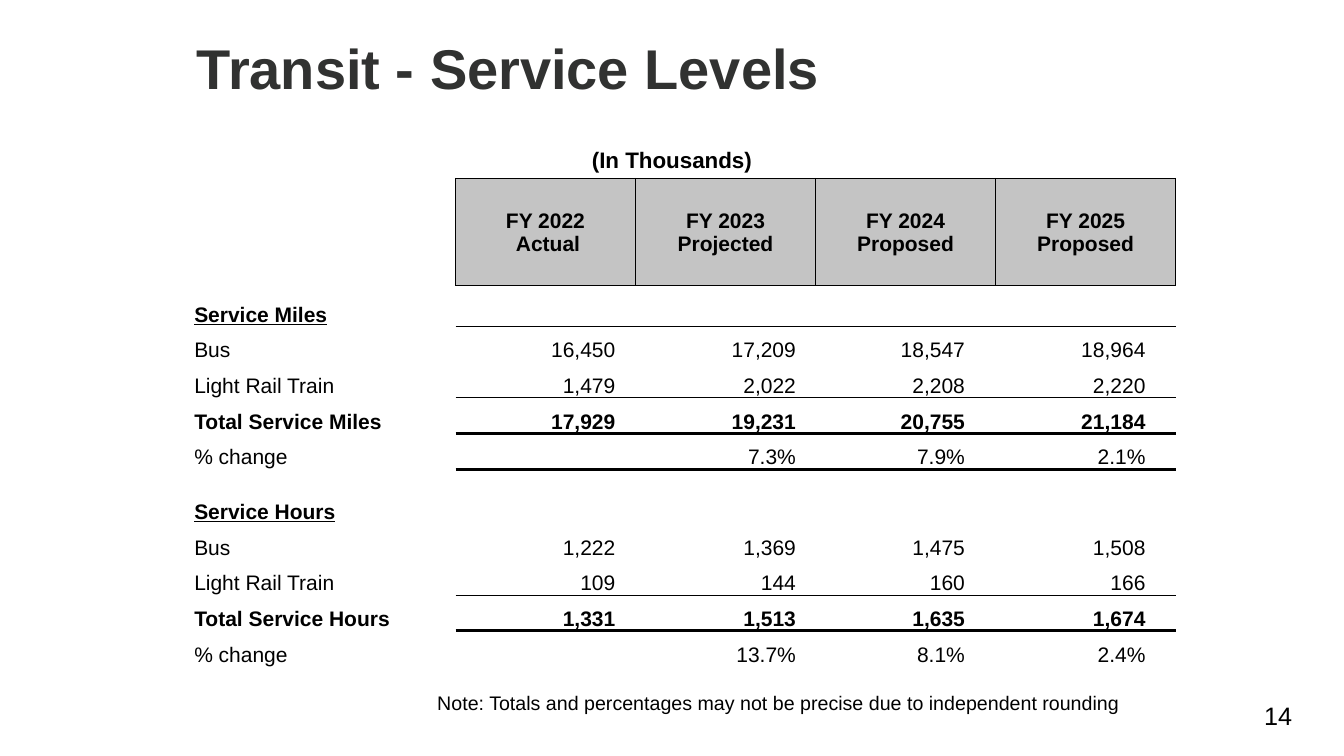
import dataclasses

import lxml.etree
import pptx
import pptx.dml.color
import pptx.enum.text
import pptx.oxml.ns
import pptx.util

ALIGN = pptx.enum.text.PP_ALIGN
ANCHOR = pptx.enum.text.MSO_ANCHOR
PLAIN_TABLE_STYLE = "{2D5ABB26-0587-4C30-8999-92F81FD0307C}"


@dataclasses.dataclass(frozen=True)
class Theme:
    font: str = "Arial"
    title_color: str = "313231"
    ink: str = "000000"
    header_fill: str = "C4C4C4"
    title_size: int = 40
    number_size: int = 18
    unit_size: int = 16
    table_size: int = 15
    note_size: int = 14
    thin_line: float = 1
    thick_line: float = 2.25


THEME = Theme()

HEADERS = ["FY 2022\n Actual", "FY 2023 Projected", "FY 2024 Proposed", "FY 2025\nProposed"]
SECTIONS = [
    ("Service Miles", [
        ("Bus", ["16,450", "17,209", "18,547", "18,964"]),
        ("Light Rail Train", ["1,479", "2,022", "2,208", "2,220"]),
        ("Total Service Miles", ["17,929", "19,231", "20,755", "21,184"]),
        ("% change", ["", "7.3%", "7.9%", "2.1%"]),
    ]),
    ("Service Hours", [
        ("Bus", ["1,222", "1,369", "1,475", "1,508"]),
        ("Light Rail Train", ["109", "144", "160", "166"]),
        ("Total Service Hours", ["1,331", "1,513", "1,635", "1,674"]),
        ("% change", ["", "13.7%", "8.1%", "2.4%"]),
    ]),
]
COLUMN_WIDTHS = [256, 171, 172, 171, 172]
HEADER_HEIGHT = 102
SECTION_HEIGHTS = [39, 52]
ROW_HEIGHT = 34
RIGHT_INSETS = [19, 19, 29, 29]


def px(length):
    return pptx.util.Emu(length * 9525)


def rgb(color):
    return pptx.dml.color.RGBColor.from_string(color)


def format_text(text_frame, size, color=THEME.ink, bold=False, underline=False, align=ALIGN.LEFT):
    for paragraph in text_frame.paragraphs:
        paragraph.alignment = align
        for run in paragraph.runs:
            run.font.name = THEME.font
            run.font.size = pptx.util.Pt(size)
            run.font.color.rgb = rgb(color)
            run.font.bold = bold
            run.font.underline = underline


def add_title(slide, box, text):
    title = slide.shapes.title
    title.left, title.top, title.width, title.height = map(px, box)
    frame = title.text_frame
    frame.text = text
    frame.auto_size = pptx.enum.text.MSO_AUTO_SIZE.NONE
    frame.vertical_anchor = ANCHOR.MIDDLE
    format_text(frame, THEME.title_size, THEME.title_color, bold=True)


def add_label(slide, box, text, size, **style):
    frame = slide.shapes.add_textbox(*map(px, box)).text_frame
    frame.word_wrap = True
    frame.text = text
    format_text(frame, size, **style)
    return frame


def add_page_number(slide, box, text):
    frame = add_label(slide, box, text, THEME.number_size, align=ALIGN.RIGHT)
    frame.margin_top = 0


def add_borders(cell, sides):
    """Draw borders given as {side letter: points}, in the order L, R, T, B."""
    properties = cell._tc.get_or_add_tcPr()
    qn = pptx.oxml.ns.qn
    for side in "LRTB":
        if side in sides:
            line = lxml.etree.SubElement(properties, qn(f"a:ln{side}"), w=str(pptx.util.Pt(sides[side])))
            fill = lxml.etree.SubElement(line, qn("a:solidFill"))
            lxml.etree.SubElement(fill, qn("a:srgbClr"), val=THEME.ink)


def fill_cell(cell, text="", borders=None, fill=None, anchor=ANCHOR.BOTTOM,
              left=7, right=7, **style):
    add_borders(cell, borders or {})
    if fill:
        cell.fill.solid()
        cell.fill.fore_color.rgb = rgb(fill)
    else:
        cell.fill.background()
    cell.margin_left, cell.margin_right = px(left), px(right)
    cell.margin_top, cell.margin_bottom = px(1), 0
    cell.vertical_anchor = anchor
    cell.text_frame.text = text
    format_text(cell.text_frame, THEME.table_size, **style)


def row_borders(label):
    thin, thick = THEME.thin_line, THEME.thick_line
    if label.startswith("Total"):
        return {"T": thin, "B": thick}
    return {"Light Rail Train": {"B": thin}, "% change": {"T": thick}}.get(label, {})


def add_service_table(slide, left, top):
    heights = [HEADER_HEIGHT]
    for section_height, (_, lines) in zip(SECTION_HEIGHTS, SECTIONS):
        heights += [section_height] + [ROW_HEIGHT] * len(lines)
    box = (left, top, sum(COLUMN_WIDTHS), sum(heights))
    table = slide.shapes.add_table(len(heights), len(COLUMN_WIDTHS), *map(px, box)).table
    table.first_row = table.horz_banding = False
    table._tbl.tblPr.find(pptx.oxml.ns.qn("a:tableStyleId")).text = PLAIN_TABLE_STYLE
    for column, width in zip(table.columns, COLUMN_WIDTHS):
        column.width = px(width)
    for row, height in zip(table.rows, heights):
        row.height = px(height)

    rows = iter(table.rows)
    corner, *header_cells = next(rows).cells
    fill_cell(corner, borders={"R": THEME.thin_line})
    for cell, text in zip(header_cells, HEADERS):
        fill_cell(cell, text, dict.fromkeys("LRTB", THEME.thin_line), THEME.header_fill,
                  ANCHOR.MIDDLE, bold=True, align=ALIGN.CENTER)
    for index, (heading, lines) in enumerate(SECTIONS):
        heading_cell, *blank_cells = next(rows).cells
        fill_cell(heading_cell, heading, bold=True, underline=True)
        for cell in blank_cells:
            fill_cell(cell, borders={"T": THEME.thin_line} if index == 0 else {})
        for label, values in lines:
            label_cell, *value_cells = next(rows).cells
            bold = label.startswith("Total")
            fill_cell(label_cell, label, bold=bold)
            for cell, value, inset in zip(value_cells, values, RIGHT_INSETS):
                # The first two percentage columns follow the same insets as their figures.
                fill_cell(cell, value, row_borders(label), left=8, right=inset,
                          bold=bold, align=ALIGN.RIGHT)


def build_service_levels(presentation):
    slide = presentation.slides.add_slide(presentation.slide_layouts[5])
    add_title(slide, (178, 38, 897, 51), "Transit - Service Levels")
    add_page_number(slide, (941, 667, 299, 38), "14")
    add_label(slide, (160, 134, 960, 36), "(In Thousands)", THEME.unit_size,
              bold=True, align=ALIGN.CENTER)
    add_service_table(slide, 178, 170)
    add_label(slide, (407, 653, 698, 33),
              "Note: Totals and percentages may not be precise due to independent rounding",
              THEME.note_size)


def main():
    presentation = pptx.Presentation()
    presentation.slide_width, presentation.slide_height = px(1280), px(720)
    build_service_levels(presentation)
    presentation.save("out.pptx")


if __name__ == "__main__":
    main()
